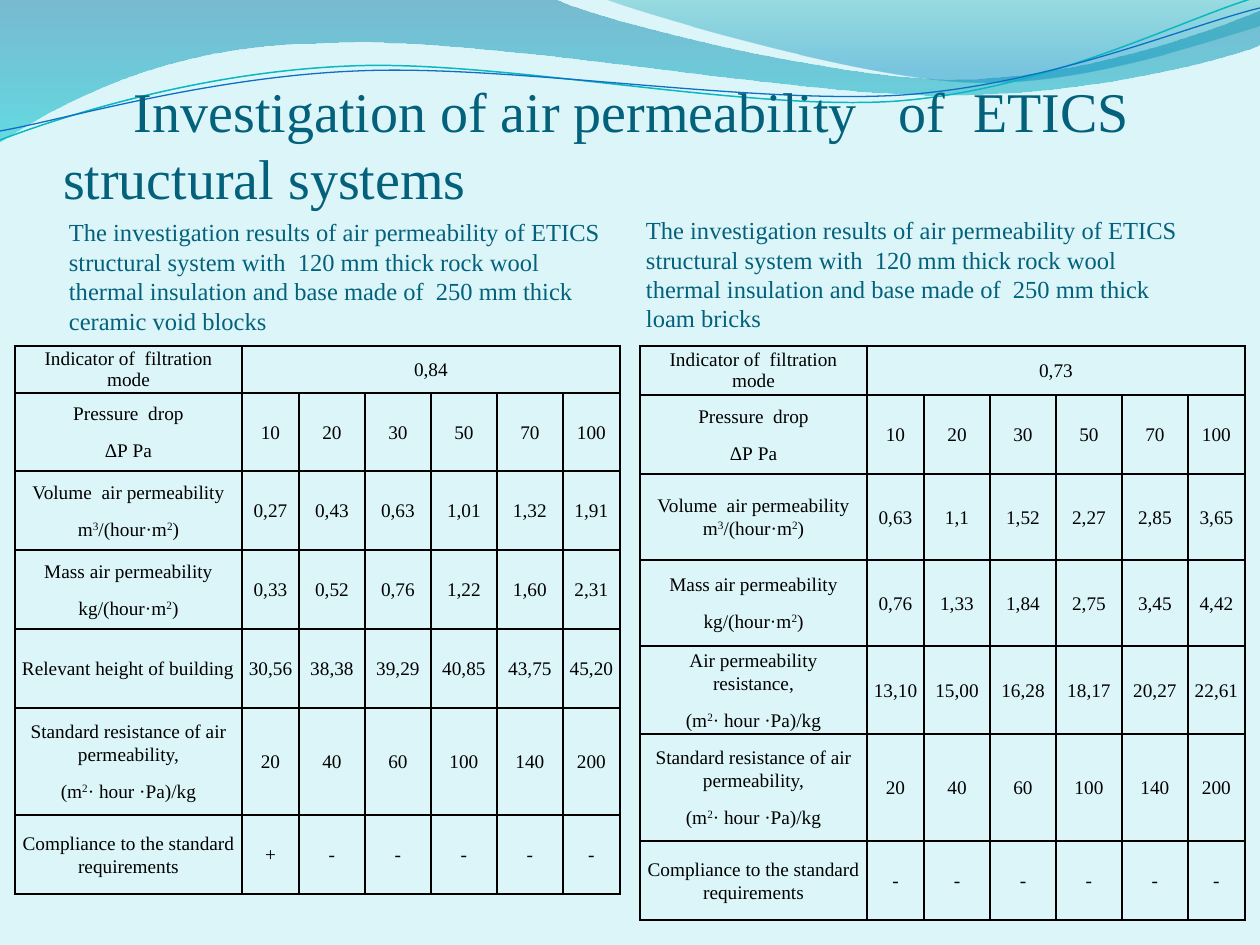
from lxml import etree
from pptx import Presentation
from pptx import util as u
from pptx.dml.color import RGBColor
from pptx.enum import text
from pptx.oxml.ns import qn

FONT = "Times New Roman"
PALE = RGBColor(0xDB, 0xF5, 0xF9)
TEAL = RGBColor(0x04, 0x61, 0x7B)
BLACK = RGBColor(0, 0, 0)

TITLE = "Investigation of air permeability   of  ETICS structural systems"
CAPTION = ("The investigation results of air permeability of ETICS structural system with  "
           "120 mm thick rock wool thermal insulation and base made of  250 mm thick")

# Labels hold one string per paragraph; text between carets is superscript.
MODE = ["Indicator of  filtration mode"]
DROPS = ["10", "20", "30", "50", "70", "100"]
MASS = ["Mass air permeability", "kg/(hour·m^2^)"]
HEIGHT = ["Relevant height of building"]
RESISTANCE_UNIT = "(m^2^· hour ·Pа)/kg"
STANDARD = (["Standard resistance of air permeability,", RESISTANCE_UNIT],
            ["20", "40", "60", "100", "140", "200"])
COMPLIANCE = ["Compliance to the standard requirements"]

SYSTEMS = [
    {"left": 15, "caption_at": (63, 256), "base": " ceramic void blocks",
     "heights": [47, 78, 79, 79, 79, 107, 79],
     "rows": [
         (MODE, ["0,84"]),
         (["Pressure  drop", "ΔР Pa"], DROPS),
         (["Volume  air permeability", "m^3^/(hour·m^2^)"],
          ["0,27", "0,43", "0,63", "1,01", "1,32", "1,91"]),
         (MASS, ["0,33", "0,52", "0,76", "1,22", "1,60", "2,31"]),
         (HEIGHT, ["30,56", "38,38", "39,29", "40,85", "43,75", "45,20"]),
         STANDARD,
         (COMPLIANCE, ["+", "-", "-", "-", "-", "-"])]},
    {"left": 640, "caption_at": (640, 254), "base": "  loam bricks",
     "heights": [49, 79, 86, 86, 86, 107, 79],
     "rows": [
         (MODE, ["0,73"]),
         (["Pressure  drop", "ΔР Pа"], DROPS),
         (["Volume  air permeability m^3^/(hour·m^2^)"],
          ["0,63", "1,1", "1,52", "2,27", "2,85", "3,65"]),
         (MASS, ["0,76", "1,33", "1,84", "2,75", "3,45", "4,42"]),
         (["Air permeability resistance,", RESISTANCE_UNIT],
          ["13,10", "15,00", "16,28", "18,17", "20,27", "22,61"]),
         STANDARD,
         (COMPLIANCE, ["-"] * 6)]},
]
COLUMNS = [227, 57, 66, 66, 66, 66, 57]
TABLE_TOP = 346

# Two numbers are a point; six are a cubic curve: two handles and an end.
WAVES = [  # outline, gradient stops (position, colour, opacity %)
    ([(0, -1), (554, -1), (600, 21, 837, 79, 955, 79), (1075, 79, 1207, 33, 1260, 11),
      (1261, 45), (1239, 55, 1096, 96, 940, 95), (784, 95, 481, 35, 324, 43),
      (163, 44, 58, 105, -1, 142)],
     [(0, RGBColor(0x00, 0x74, 0xA1), 45), (1, RGBColor(0x00, 0xC6, 0xCF), 55)]),
    ([(604, -1), (642, 14, 859, 78, 969, 82), (1079, 87, 1211, 40, 1260, 26), (1260, 0)],
     [(0, RGBColor(0x00, 0xA1, 0xA9), 30), (0.8, RGBColor(0x00, 0x8B, 0xBF), 45)]),
]
RIPPLES = [  # path, colour, width in points
    ([(0, 140), (60, 117, 199, 72, 349, 66), (498, 59, 747, 112, 898, 101),
      (1050, 89, 1182, 19, 1257, -3)], RGBColor(0x0A, 0xB8, 0xBF), 0.85),
    ([(0, 131), (59, 121, 207, 77, 357, 71), (508, 64, 752, 105, 903, 95),
      (1053, 84, 1186, 26, 1260, 8)], RGBColor(0x0F, 0x6F, 0xC6), 0.75),
]


def px(n):
    return u.Emu(round(n * 914400 / 126))


def add_outline(slide, steps, close):
    """Draw every point as a line, then join each curve's three lines into one cubic."""
    points = [(px(x), px(y)) for step in steps for x, y in zip(step[::2], step[1::2])]
    builder = slide.shapes.build_freeform(*points[0])
    builder.add_line_segments(points[1:], close=close)
    outline = builder.convert_to_shape()
    outline.shadow.inherit = False
    lines = iter(list(outline._element.iter(qn("a:lnTo"))))
    for step in steps[1:]:
        line = next(lines)
        if len(step) == 6:
            curve = etree.Element(qn("a:cubicBezTo"))
            line.addprevious(curve)
            for part in (line, next(lines), next(lines)):
                curve.append(part[0])
                part.getparent().remove(part)
    return outline


def add_wave(slide, steps, stops):
    wave = add_outline(slide, steps, True)
    wave.line.fill.background()
    wave.fill.gradient()
    wave.fill.gradient_angle = 270
    for stop, (position, color, _) in zip(wave.fill.gradient_stops, stops):
        stop.position = position
        stop.color.rgb = color
    colors = wave._element.spPr.iter(qn("a:srgbClr"))
    for color, (_, _, opacity) in zip(list(colors), stops):
        etree.SubElement(color, qn("a:alpha"), val=str(opacity * 1000))


def add_ripple(slide, steps, color, width):
    ripple = add_outline(slide, steps, False)
    ripple.fill.background()
    ripple.line.color.rgb = color
    ripple.line.width = u.Pt(width)


def style(paragraph, size, color):
    paragraph.font.name = FONT
    paragraph.font.size = u.Pt(size)
    paragraph.font.color.rgb = color


def place_title(slide):
    title = slide.shapes.title
    title.left, title.top, title.width, title.height = px(63), px(54), px(1134), px(157)
    frame = title.text_frame
    frame.text = TITLE
    frame.vertical_anchor = text.MSO_ANCHOR.BOTTOM
    frame.margin_left = frame.margin_right = frame.margin_bottom = 0
    heading = frame.paragraphs[0]
    heading.alignment = text.PP_ALIGN.LEFT
    heading._p.get_or_add_pPr().set("indent", str(px(71)))
    style(heading, 32, TEAL)
    slide.shapes._spTree.append(title._element)  # in front of the waves


def add_caption(slide, at, base):
    frame = slide.shapes.add_textbox(*map(px, at), px(557), px(91)).text_frame
    frame.word_wrap = True
    frame.vertical_anchor = text.MSO_ANCHOR.BOTTOM
    frame.margin_left = frame.margin_right = px(6)
    frame.margin_top, frame.margin_bottom = 0, px(12)
    frame.text = CAPTION + base
    style(frame.paragraphs[0], 14, TEAL)


def fill_cell(cell, lines, margin, spacing, alignment):
    cell.vertical_anchor = text.MSO_ANCHOR.MIDDLE
    cell.margin_left = cell.margin_right = px(margin)
    cell.margin_top = cell.margin_bottom = 0
    frame = cell.text_frame
    for i, line in enumerate(lines):
        paragraph = frame.add_paragraph() if i else frame.paragraphs[0]
        paragraph.alignment = alignment
        paragraph.line_spacing = spacing
        paragraph.space_after = u.Pt(8)
        style(paragraph, 11, BLACK)
        for j, part in enumerate(line.split("^")):
            run = paragraph.add_run()
            run.text = part
            if j % 2:
                run.font._element.set("baseline", "30000")


def rule_cell(cell):
    """Clear the fill and draw a black 1 pt border on all four sides."""
    cell.fill.background()
    for i, side in enumerate(("lnL", "lnR", "lnT", "lnB")):
        border = etree.Element(qn("a:" + side), w=str(u.Pt(1)))
        solid = etree.SubElement(border, qn("a:solidFill"))
        etree.SubElement(solid, qn("a:srgbClr"), val=str(BLACK))
        cell._tc.tcPr.insert(i, border)


def add_results(slide, left, rows, heights):
    table = slide.shapes.add_table(len(rows), len(COLUMNS), px(left), px(TABLE_TOP),
                                   px(sum(COLUMNS)), px(sum(heights))).table
    table.first_row = table.horz_banding = False
    for column, width in zip(table.columns, COLUMNS):
        column.width = px(width)
    for r, (label, values) in enumerate(rows):
        table.rows[r].height = px(heights[r])
        if len(values) == 1:
            table.cell(r, 1).merge(table.cell(r, len(COLUMNS) - 1))
        spacing = 1.0 if label is MODE else 1.07
        side = text.PP_ALIGN.LEFT if label is HEIGHT else text.PP_ALIGN.CENTER
        fill_cell(table.cell(r, 0), label, 7, spacing, side)
        for c, value in enumerate(values, 1):
            fill_cell(table.cell(r, c), [value], 6, spacing, text.PP_ALIGN.CENTER)
    for cell in table.iter_cells():
        rule_cell(cell)


def main():
    deck = Presentation()
    deck.slide_width, deck.slide_height = px(1260), px(945)
    slide = deck.slides.add_slide(deck.slide_layouts[5])
    slide.background.fill.solid()
    slide.background.fill.fore_color.rgb = PALE
    for wave in WAVES:
        add_wave(slide, *wave)
    for ripple in RIPPLES:
        add_ripple(slide, *ripple)
    place_title(slide)
    for system in SYSTEMS:
        add_caption(slide, system["caption_at"], system["base"])
    for system in SYSTEMS:
        add_results(slide, system["left"], system["rows"], system["heights"])
    deck.save("out.pptx")


if __name__ == "__main__":
    main()
